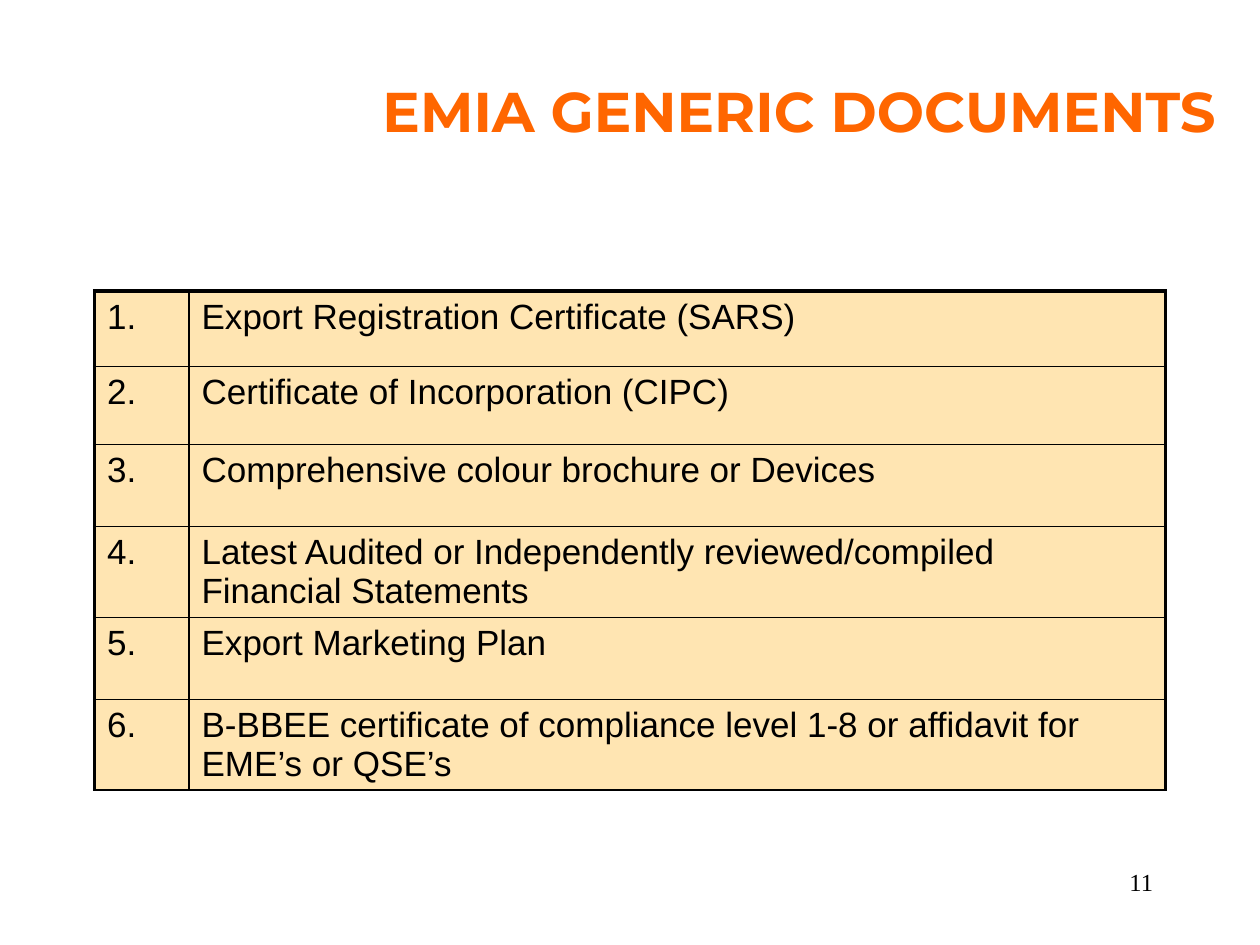
from lxml.etree import SubElement
from pptx import Presentation
from pptx.dml.color import RGBColor
from pptx.enum.text import MSO_ANCHOR, MSO_AUTO_SIZE, PP_ALIGN
from pptx.oxml.ns import qn
from pptx.util import Inches, Pt

THEME = {
    "title": {"name": "Montserrat", "size": Pt(32), "bold": True, "color": "FF6600"},
    "cell": {"name": "Arial", "size": Pt(20), "bold": False, "color": "000000"},
    "number": {"name": "Times New Roman", "size": Pt(14), "bold": False, "color": "000000"},
    "cell_fill": "FFCC66",
    "cell_alpha": 50000,
    "border": "000000",
    "outer_border": Pt(2.25),
    "inner_border": Pt(1),
}
DOCUMENTS = [
    ("Export Registration Certificate (SARS)", 0.6),
    ("Certificate of Incorporation (CIPC)", 0.62),
    ("Comprehensive colour brochure or Devices", 0.65),
    ("Latest Audited or Independently reviewed/compiled\vFinancial Statements", 0.65),
    ("Export Marketing Plan", 0.65),
    ("B-BBEE certificate of compliance level 1-8 or affidavit for EME’s or QSE’s", 0.65),
]
COLUMN_WIDTHS = [0.75, 7.75]


def format_text(paragraph, style):
    for attribute, value in THEME[style].items():
        if attribute == "color":
            paragraph.font.color.rgb = RGBColor.from_string(value)
        else:
            setattr(paragraph.font, attribute, value)


def add_border(cell, side, width):
    line = SubElement(cell._tc.get_or_add_tcPr(), qn(f"a:ln{side}"), w=str(width))
    fill = SubElement(line, qn("a:solidFill"))
    SubElement(fill, qn("a:srgbClr"), val=THEME["border"])


presentation = Presentation()
presentation.slide_width = Inches(10)
presentation.slide_height = Inches(7.5)
slide = presentation.slides.add_slide(presentation.slide_layouts[5])

# Title
title = slide.shapes.title
title.left, title.top = Inches(2.72), Inches(0.25)
title.width, title.height = Inches(7.25), Inches(1.25)
title.text_frame.text = "EMIA GENERIC DOCUMENTS"
title.text_frame.auto_size = MSO_AUTO_SIZE.NONE
title.text_frame.vertical_anchor = MSO_ANCHOR.MIDDLE
heading = title.text_frame.paragraphs[0]
heading.alignment = PP_ALIGN.CENTER
format_text(heading, "title")

# Numbered table of documents
total_height = sum(height for _, height in DOCUMENTS)
documents = slide.shapes.add_table(
    len(DOCUMENTS), len(COLUMN_WIDTHS), Inches(0.75), Inches(2.31),
    Inches(sum(COLUMN_WIDTHS)), Inches(total_height),
).table
documents.first_row = False
documents.horz_banding = False
for column, width in zip(documents.columns, COLUMN_WIDTHS):
    column.width = Inches(width)

for row, (document, height) in enumerate(DOCUMENTS):
    documents.rows[row].height = Inches(height)
    for column, content in enumerate([f"{row + 1}.", document]):
        cell = documents.cell(row, column)
        cell.text = content
        format_text(cell.text_frame.paragraphs[0], "cell")
        outer_sides = {"L": column == 0, "R": column == 1, "T": row == 0, "B": False}
        for side, is_outer in outer_sides.items():
            add_border(cell, side, THEME["outer_border" if is_outer else "inner_border"])
        cell.fill.solid()
        cell.fill.fore_color.rgb = RGBColor.from_string(THEME["cell_fill"])
        fill_color = cell._tc.tcPr.find(qn("a:solidFill")).find(qn("a:srgbClr"))
        SubElement(fill_color, qn("a:alpha"), val=str(THEME["cell_alpha"]))

# Page number
page_number = slide.shapes.add_textbox(Inches(7.17), Inches(6.83), Inches(2.08), Inches(0.5))
page_number.text_frame.word_wrap = True
page_number.text_frame.text = "11"
number = page_number.text_frame.paragraphs[0]
number.alignment = PP_ALIGN.RIGHT
format_text(number, "number")

presentation.save("out.pptx")
